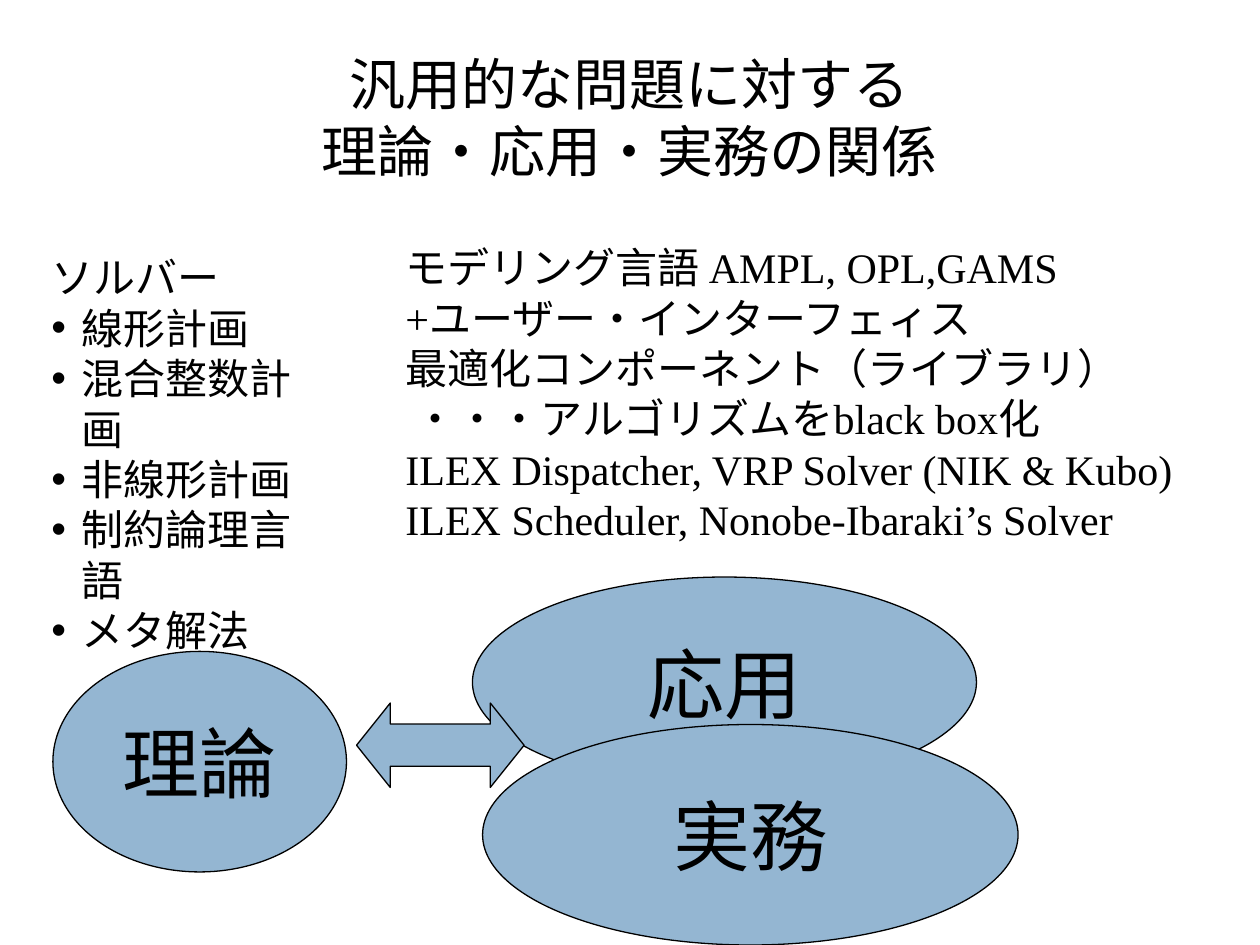
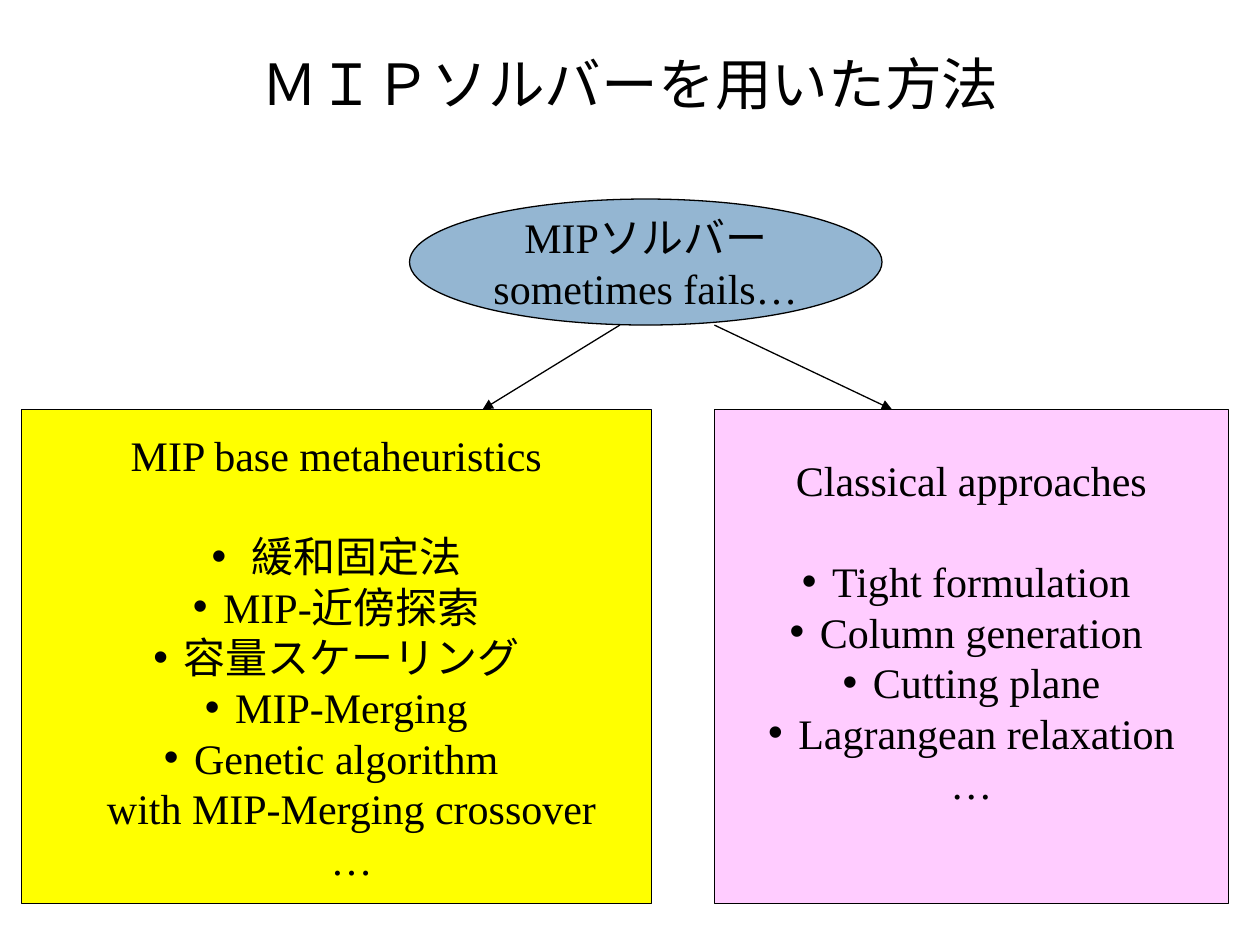
from lxml import etree
from pptx import Presentation
from pptx.dml.color import RGBColor
from pptx.enum.shapes import MSO_CONNECTOR, MSO_SHAPE
from pptx.enum.text import MSO_ANCHOR, PP_ALIGN
from pptx.oxml.ns import qn
from pptx.util import Inches, Pt

ELLIPSE, RECTANGLE = MSO_SHAPE.OVAL, MSO_SHAPE.RECTANGLE
DOUBLE_ARROW = MSO_SHAPE.LEFT_RIGHT_ARROW
STRAIGHT = MSO_CONNECTOR.STRAIGHT
TOP, MIDDLE = MSO_ANCHOR.TOP, MSO_ANCHOR.MIDDLE
LEFT, CENTER = PP_ALIGN.LEFT, PP_ALIGN.CENTER

COLORS = {"ink": "000000", "blue": "94B6D2", "yellow": "FFFF00", "pink": "FFCCFF"}
TITLE_FONT, BODY_FONT = "Calibri", "Times New Roman"
BODY_SIZE, CIRCLE_SIZE = 24, 44
LINE_WIDTH = Pt(0.75)
BULLET_INDENT = Inches(0.24)
HEADING_GAP = Pt(29)
BULLET = "• "  # marks a bulleted entry in the text lists


def color(name):
    return RGBColor.from_string(COLORS[name])


def add_bullet(para):
    properties = para._p.get_or_add_pPr()
    properties.set("marL", str(BULLET_INDENT))
    properties.set("indent", str(-BULLET_INDENT))
    font = etree.SubElement(properties, qn("a:buFont"))
    font.set("typeface", "Arial")
    etree.SubElement(properties, qn("a:buChar")).set("char", "•")


def write(box, entries, size=BODY_SIZE, font=BODY_FONT, align=LEFT, **frame_format):
    """Fill the box with one paragraph per entry; newlines are line breaks."""
    frame = box.text_frame
    for name, value in frame_format.items():
        setattr(frame, name, value)
    for index, entry in enumerate(entries):
        para = frame.add_paragraph() if index else frame.paragraphs[0]
        para.alignment = align
        para.text = entry.removeprefix(BULLET).replace("\n", "\v")
        if entry.startswith(BULLET):
            add_bullet(para)
        for span in para.runs:
            for name, value in {"size": Pt(size), "name": font}.items():
                setattr(span.font, name, value)
            span.font.color.rgb = color("ink")


def add_text(page, place, entries, **text_format):
    box = page.shapes.add_textbox(*map(Inches, place))
    write(box, entries, word_wrap=True, vertical_anchor=TOP, **text_format)


def add_title(page, text, size):
    add_text(page, (0.5, 0.3, 9, 1.25), [text], size=size, font=TITLE_FONT,
             align=CENTER, margin_top=Inches(0.09))


def add_outlined(page, kind, place, fill):
    shape = page.shapes.add_shape(kind, *map(Inches, place))
    shape.shadow.inherit = False
    shape.fill.solid()
    shape.fill.fore_color.rgb = color(fill)
    shape.line.color.rgb = color("ink")
    shape.line.width = LINE_WIDTH
    return shape


def add_ellipse(page, place, entries, size=BODY_SIZE):
    ellipse = add_outlined(page, ELLIPSE, place, "blue")
    write(ellipse, entries, size=size, align=CENTER, word_wrap=False,
          vertical_anchor=MIDDLE)


def add_panel(page, place, fill, entries, margin_bottom=0.05):
    """Draw a method box whose first entry is its heading."""
    panel = add_outlined(page, RECTANGLE, place, fill)
    write(panel, entries, align=CENTER, word_wrap=False, vertical_anchor=MIDDLE,
          margin_bottom=Inches(margin_bottom))
    panel.text_frame.paragraphs[0].space_after = HEADING_GAP


def add_arrow(page, start, end):
    arrow = page.shapes.add_connector(STRAIGHT, *map(Inches, start + end))
    arrow.line.color.rgb = color("ink")
    arrow.line.width = LINE_WIDTH
    etree.SubElement(arrow.line._get_or_add_ln(), qn("a:tailEnd")).set("type", "triangle")
    etree.SubElement(arrow._element.spPr, qn("a:effectLst"))


def add_relation_diagram(page, left, top):
    circles = {
        "理論": (0, 0.59, 2.33, 1.75),
        "応用": (3.33, 0, 4, 1.67),
        "実務": (3.41, 1.17, 4.25, 1.75),
    }
    for label, (x, y, width, height) in circles.items():
        add_ellipse(page, (left + x, top + y, width, height), [label], CIRCLE_SIZE)
    exchange = add_outlined(page, DOUBLE_ARROW, (left + 2.41, top + 1, 1.33, 0.67), "blue")
    exchange.adjustments[0] = 0.5
    exchange.adjustments[1] = 0.4


def build_relation_page(page):
    add_relation_diagram(page, 0.42, 4.58)
    add_title(page, "汎用的な問題に対する\n理論・応用・実務の関係", 32)
    add_text(page, (0.31, 1.95, 2.32, 2.5), [
        "ソルバー",
        "• 線形計画",
        "• 混合整数計画",
        "• 非線形計画",
        "• 制約論理言語",
        "• メタ解法",
    ])
    add_text(page, (3.12, 1.87, 6.4, 2.5), [
        "モデリング言語 AMPL, OPL,GAMS",
        "+ユーザー・インターフェィス",
        "最適化コンポーネント（ライブラリ）",
        " ・・・アルゴリズムをblack box化\nILEX Dispatcher, VRP Solver (NIK & Kubo)",
        "ILEX Scheduler, Nonobe-Ibaraki’s Solver",
    ], margin_right=0)


def build_method_page(page):
    add_title(page, "ＭＩＰソルバーを用いた方法", 32.4)
    add_ellipse(page, (3.25, 1.58, 3.75, 1), ["MIPソルバー", "sometimes fails…"])
    panel_top, panel_height = 3.25, 3.92
    add_panel(page, (0.17, panel_top, 5, panel_height), "yellow", [
        "MIP base metaheuristics",
        "•  緩和固定法",
        "• MIP-近傍探索",
        "• 容量スケーリング",
        "• MIP-Merging",
        "• Genetic algorithm \nwith MIP-Merging crossover\n…",
    ])
    add_panel(page, (5.67, panel_top, 4.08, panel_height), "pink", [
        "Classical approaches",
        "• Tight formulation ",
        "• Column generation ",
        "• Cutting plane",
        "• Lagrangean relaxation",
        "…",
    ], margin_bottom=0.45)
    for start_x, end_x in ((4.92, 3.83), (5.67, 7.08)):
        add_arrow(page, (start_x, 2.58), (end_x, panel_top))


def main():
    deck = Presentation()
    deck.slide_width, deck.slide_height = Inches(10), Inches(7.5)
    blank = deck.slide_layouts[6]
    for build_page in (build_relation_page, build_method_page):
        build_page(deck.slides.add_slide(blank))
    deck.save("out.pptx")


if __name__ == "__main__":
    main()
